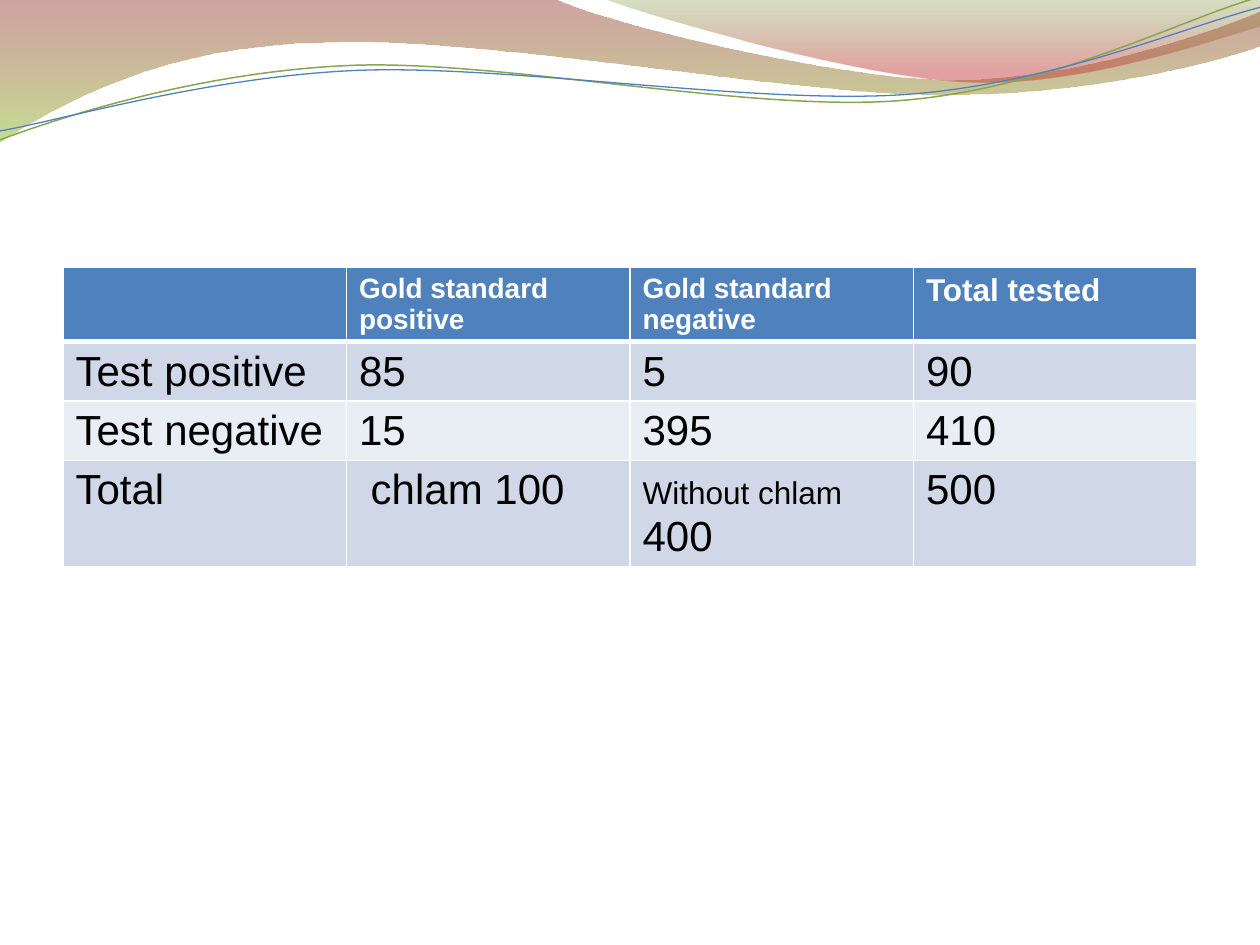
from math import cos, radians, sin

from lxml import etree
from pptx import Presentation
from pptx.dml.color import RGBColor
from pptx.oxml.ns import qn
from pptx.util import Cm, Pt

WHITE = RGBColor(0xFF, 0xFF, 0xFF)
BLACK = RGBColor(0, 0, 0)
BLUE = RGBColor(0x4F, 0x81, 0xBD)
GREEN = RGBColor(0x89, 0xA5, 0x4F)
ROW_FILLS = [RGBColor(0xD0, 0xD8, 0xE8), RGBColor(0xE9, 0xED, 0xF4)]

FONT = "Arial"
BLANK_LAYOUT = 6
LINE_ROTATION = -2.7

# Waves in cm: a start point, then segments of one point (straight) or three (Bezier).
# Gradient stops: position, colour, opacity in percent.
BANDS = [
    {"start": (0, -0.03),
     "segments": [
         [(11.18, -0.03)],
         [(12.09, 0.43), (16.87, 1.6), (19.25, 1.6)],
         [(21.67, 1.6), (24.33, 0.66), (25.4, 0.23)],
         [(25.43, 0.91)],
         [(24.97, 1.12), (22.1, 1.93), (18.95, 1.91)],
         [(15.8, 1.91), (9.7, 0.71), (6.53, 0.86)],
         [(3.28, 0.89), (1.17, 2.11), (-0.03, 2.87)],
         [(0, -0.03)]],
     "stops": [(0, RGBColor(0x97, 0x33, 0x30), 45),
               (1, RGBColor(0x95, 0xC2, 0x38), 55)]},
    {"start": (12.17, -0.03),
     "segments": [
         [(12.93, 0.28), (17.32, 1.57), (19.53, 1.65)],
         [(21.74, 1.75), (24.41, 0.81), (25.4, 0.53)],
         [(25.4, 0)],
         [(12.17, -0.03)]],
     "stops": [(0, RGBColor(0x76, 0x95, 0x37), 30),
               (0.8, RGBColor(0xBE, 0x33, 0x30), 45)]},
]
WAVE_LINES = [
    {"start": (0, 2.82),
     "segments": [
         [(1.22, 2.36), (4.01, 1.45), (7.04, 1.32)],
         [(10.03, 1.19), (15.06, 2.26), (18.11, 2.03)],
         [(21.16, 1.8), (23.83, 0.38), (25.35, -0.05)]],
     "center": (12.67, 1.46), "color": GREEN, "width": 0.85},
    {"start": (0, 2.64),
     "segments": [
         [(1.19, 2.44), (4.17, 1.55), (7.19, 1.42)],
         [(10.24, 1.3), (15.16, 2.11), (18.21, 1.91)],
         [(21.23, 1.7), (23.9, 0.53), (25.4, 0.15)]],
     "center": (12.69, 1.5), "color": BLUE, "width": 0.75},
]

# Each cell is a list of (text, size) runs
HEADER = [[], [("Gold standard positive", 16)], [("Gold standard negative", 16)],
          [("Total tested", 18)]]
RESULTS = [
    [[("Test positive", 24)], [("85", 24)], [("5", 24)], [("90", 24)]],
    [[("Test negative", 24)], [("15", 24)], [("395", 24)], [("410", 24)]],
    [[("Total", 24)], [(" chlam 100", 24)],
     [("Without chlam", 18), (" 400", 24)], [("500", 24)]],
]


def rotate(point, center, degrees):
    (x, y), (cx, cy) = point, center
    c, s = cos(radians(degrees)), sin(radians(degrees))
    return cx + (x - cx) * c - (y - cy) * s, cy + (x - cx) * s + (y - cy) * c


def add_outline(slide, start, segments, left, top, closed):
    """Draw a freeform whose three-point segments are Bezier curves."""
    points = [start] + [point for segment in segments for point in segment]
    corners = [(left + Cm(x), top + Cm(y)) for x, y in points]
    builder = slide.shapes.build_freeform(*corners[0], scale=1.0)
    builder.add_line_segments(corners[1:], close=closed)
    outline = builder.convert_to_shape()
    outline.shadow.inherit = False

    # Merge each run of three straight steps into one curve
    steps = iter(list(outline._element.iter(qn("a:lnTo"))))
    for segment in segments:
        pieces = [next(steps) for _ in segment]
        if len(pieces) == 3:
            curve = etree.Element(qn("a:cubicBezTo"))
            pieces[0].addprevious(curve)
            for piece in pieces:
                curve.append(piece[0])
                piece.getparent().remove(piece)
    return outline


def add_waves(slide, left, top):
    # Translucent gradient bands
    for band in BANDS:
        shape = add_outline(slide, band["start"], band["segments"], left, top, True)
        shape.fill.gradient()
        shape.fill.gradient_angle = 270
        for stop, (position, color, _) in zip(shape.fill.gradient_stops, band["stops"]):
            stop.position = position
            stop.color.rgb = color
        for color_xml, (_, _, opacity) in zip(shape._element.iter(qn("a:srgbClr")),
                                              band["stops"]):
            etree.SubElement(color_xml, qn("a:alpha"), val=str(opacity * 1000))
        shape.line.fill.background()

    # Thin wave lines, laid out level and then tilted
    for wave in WAVE_LINES:
        start, *segments = [[rotate(point, wave["center"], -LINE_ROTATION) for point in segment]
                            for segment in [[wave["start"]], *wave["segments"]]]
        shape = add_outline(slide, start[0], segments, left, top, False)
        shape.rotation = LINE_ROTATION
        shape.fill.background()
        shape.line.color.rgb = wave["color"]
        shape.line.width = Pt(wave["width"])


def set_borders(cell, bottom_width):
    properties = cell._tc.get_or_add_tcPr()
    widths = {"a:lnL": 1, "a:lnR": 1, "a:lnT": 1, "a:lnB": bottom_width}
    for index, (side, width) in enumerate(widths.items()):
        border = etree.Element(qn(side), w=str(Pt(width)))
        fill = etree.SubElement(border, qn("a:solidFill"))
        etree.SubElement(fill, qn("a:srgbClr"), val=str(WHITE))
        properties.insert(index, border)


def fill_cell(cell, runs, fill, color, bold):
    cell.fill.solid()
    cell.fill.fore_color.rgb = fill
    paragraph = cell.text_frame.paragraphs[0]
    for text, size in runs:
        run = paragraph.add_run()
        run.text = text
        run.font.color.rgb = color
        for name, value in {"name": FONT, "size": Pt(size), "bold": bold}.items():
            setattr(run.font, name, value)


def add_results_table(slide, left, top, width, height, row_height):
    rows = [HEADER, *RESULTS]
    frame = slide.shapes.add_table(len(rows), len(HEADER), left, top, width,
                                   row_height * len(rows))
    frame.height = height
    for r, row in enumerate(rows):
        is_header = r == 0
        fill = BLUE if is_header else ROW_FILLS[(r - 1) % 2]
        for c, runs in enumerate(row):
            cell = frame.table.cell(r, c)
            fill_cell(cell, runs, fill, WHITE if is_header else BLACK, is_header)
            set_borders(cell, 3 if is_header else 1)


def main():
    prs = Presentation()
    prs.slide_width, prs.slide_height = Cm(25.4), Cm(19.05)
    slide = prs.slides.add_slide(prs.slide_layouts[BLANK_LAYOUT])
    add_waves(slide, Cm(0), Cm(0))
    add_results_table(slide, Cm(1.27), Cm(5.38), Cm(22.86), Cm(6.43), Cm(1.03))
    prs.save("out.pptx")


if __name__ == "__main__":
    main()
